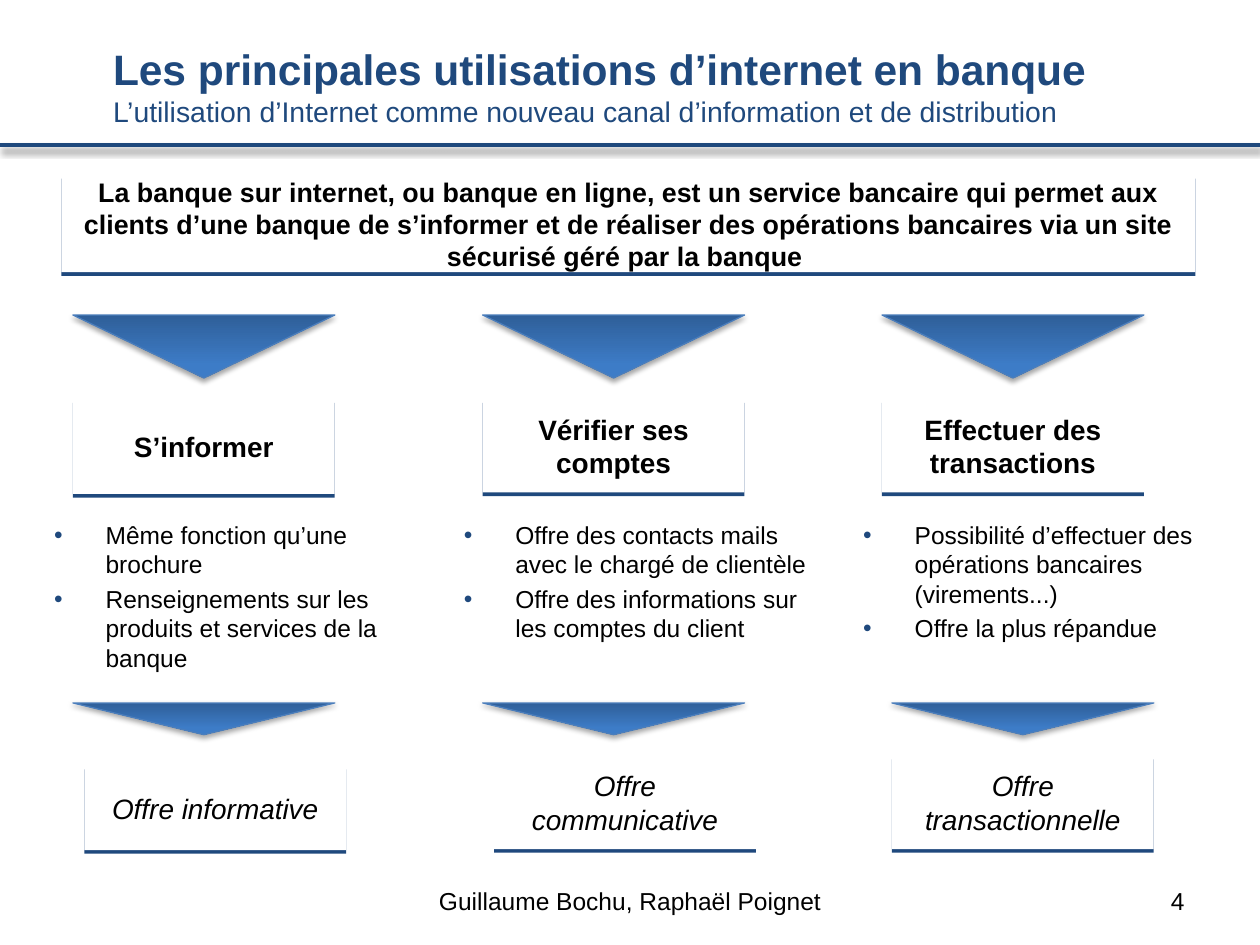
from lxml.etree import SubElement as Sub
from pptx import Presentation
from pptx.dml.color import RGBColor
from pptx.enum.shapes import MSO_CONNECTOR as Link, MSO_SHAPE as Form
from pptx.enum.text import MSO_ANCHOR as Anchor, PP_ALIGN as Align
from pptx.oxml.ns import qn
from pptx.util import Cm, Pt

NAVY, BLACK, WHITE = "1F497D", "000000", "FFFFFF"


def tint(hue):
    return RGBColor.from_string(hue)


def shade(item, hue, alpha, blur, dist):
    """Give the item a shadow that falls straight down."""
    fx = Sub(item._element.spPr, qn("a:effectLst"))
    drop = Sub(fx, qn("a:outerShdw"), blurRad=str(Pt(blur)), dist=str(Pt(dist)),
               dir="5400000", algn="ctr", rotWithShape="0")
    clr = Sub(drop, qn("a:srgbClr"), val=hue)
    Sub(clr, qn("a:alpha"), val=str(alpha * 1000))


class Deck:
    font = "Arial"

    def __init__(self, wide, high):
        self.prs = Presentation()
        self.prs.slide_width, self.prs.slide_height = Cm(wide), Cm(high)
        self.slide = self.prs.slides.add_slide(self.prs.slide_layouts[6])
        self.shapes = self.slide.shapes

    def run(self, par, text, hue=BLACK, **look):
        run = par.add_run()
        run.text = text
        run.font.color.rgb = tint(hue)
        for key, val in {"name": self.font, **look}.items():
            setattr(run.font, key, val)

    def frame(self, item, anchor, inset=None):
        body = item.text_frame
        body.word_wrap = True
        body.vertical_anchor = anchor
        if inset is not None:
            for side in ("left", "top", "right", "bottom"):
                setattr(body, "margin_" + side, Cm(inset))
        return body

    def text(self, spot, anchor=Anchor.MIDDLE):
        return self.frame(self.shapes.add_textbox(*map(Cm, spot)), anchor)

    def rule(self, y):
        line = self.shapes.add_connector(
            Link.STRAIGHT, 0, Cm(y), self.prs.slide_width, Cm(y))
        line.line.color.rgb = tint(NAVY)
        line.line.width = Pt(2)
        shade(line, BLACK, 40, 4, 3)

    def title(self, spot, head, sub):
        par = self.text(spot).paragraphs[0]
        par._p.get_or_add_pPr().set("marL", str(Cm(0.76)))
        self.run(par, head, NAVY, size=Pt(24.3), bold=True)
        par.add_line_break()
        self.run(par, sub, NAVY, size=Pt(16.2), bold=False)

    def note(self, spot, text, align):
        par = self.text(spot).paragraphs[0]
        par.alignment = align
        self.run(par, text, size=Pt(14))

    def box(self, spot, text, inset=0.25, gap=3.2, **look):
        """White box with a navy edge cast below it."""
        box = self.shapes.add_shape(Form.RECTANGLE, *map(Cm, spot))
        box.fill.solid()
        box.fill.fore_color.rgb = tint(WHITE)
        box.line.fill.background()
        shade(box, NAVY, 100, 0, 2)
        par = self.frame(box, Anchor.MIDDLE, inset).paragraphs[0]
        par.alignment = Align.CENTER
        par.space_before = Pt(gap)
        self.run(par, text, **look)

    def wedge(self, spot):
        """Triangle that points down."""
        tri = self.shapes.add_shape(Form.ISOSCELES_TRIANGLE, *map(Cm, spot))
        tri.rotation = 180
        tri.fill.gradient()
        tri.fill.gradient_angle = 90
        stops = zip(tri.fill.gradient_stops, (0, 0.8), ("2F5F99", "3D7CC7"))
        for stop, place, hue in stops:
            stop.position = place
            stop.color.rgb = tint(hue)
        tri.line.color.rgb = tint("4B7EBC")
        tri.line.width = Pt(0.75)
        shade(tri, BLACK, 35, 3.1, 1.8)

    def bullets(self, spot, items):
        body = self.text(spot, Anchor.TOP)
        for num, item in enumerate(items):
            par = body.add_paragraph() if num else body.paragraphs[0]
            par.space_before = Pt(2.8)
            props = par._p.get_or_add_pPr()
            props.set("marL", str(Cm(1.04)))
            props.set("indent", str(Cm(-1.04)))
            Sub(Sub(props, qn("a:buClr")), qn("a:srgbClr"), val=NAVY)
            Sub(props, qn("a:buFont"), typeface=self.font)
            Sub(props, qn("a:buChar"), char="•")
            self.run(par, item, size=Pt(14))


# Left edges of the column, its lower wedge and its result, heading height,
# result top and height, then the wording.
COLS = [
    (1.47, 1.47, 1.7, 1.91, 15.44, 1.7, "S’informer", "Offre informative",
     ["Même fonction qu’une brochure",
      "Renseignements sur les produits et services de la banque"]),
    (9.73, 9.73, 9.96, 1.88, 15.24, 1.88, "Vérifier ses comptes",
     "Offre communicative",
     ["Offre des contacts mails avec le chargé de clientèle",
      "Offre des informations sur les comptes du client"]),
    (17.78, 17.98, 17.98, 1.88, 15.24, 1.88, "Effectuer des transactions",
     "Offre transactionnelle",
     ["Possibilité d’effectuer des opérations bancaires (virements...)",
      "Offre la plus répandue"]),
]
WIDE = 5.28


def main():
    deck = Deck(25.4, 19.05)
    deck.rule(2.92)
    deck.title((1.27, 0.74, 22.86, 1.96),
               "Les principales utilisations d’internet en banque",
               "L’utilisation d’Internet comme nouveau canal d’information "
               "et de distribution")
    deck.note((8.31, 17.65, 8.79, 1.02), "Guillaume Bochu, Raphaël Poignet",
              Align.CENTER)
    deck.note((18.21, 17.65, 5.92, 1.02), "4", Align.RIGHT)
    deck.box((1.24, 3.53, 22.86, 1.96),
             "La banque sur internet, ou banque en ligne, est un service "
             "bancaire qui permet aux clients d’une banque de s’informer et "
             "de réaliser des opérations bancaires via un site sécurisé géré "
             "par la banque ", inset=None, gap=0, size=Pt(15.3), bold=True)
    for x, low, end, tall, top, high, head, offer, items in COLS:
        deck.wedge((x, 6.35, WIDE, 1.27))
        deck.box((x, 8.05, WIDE, tall), head, size=Pt(16), bold=True)
        deck.bullets((x - 0.63, 10.36, 7.42, 4.01), items)
        deck.wedge((low, 14.17, WIDE, 0.64))
        deck.box((end, top, WIDE, high), offer, size=Pt(16), italic=True)
    deck.prs.save("out.pptx")


if __name__ == "__main__":
    main()
